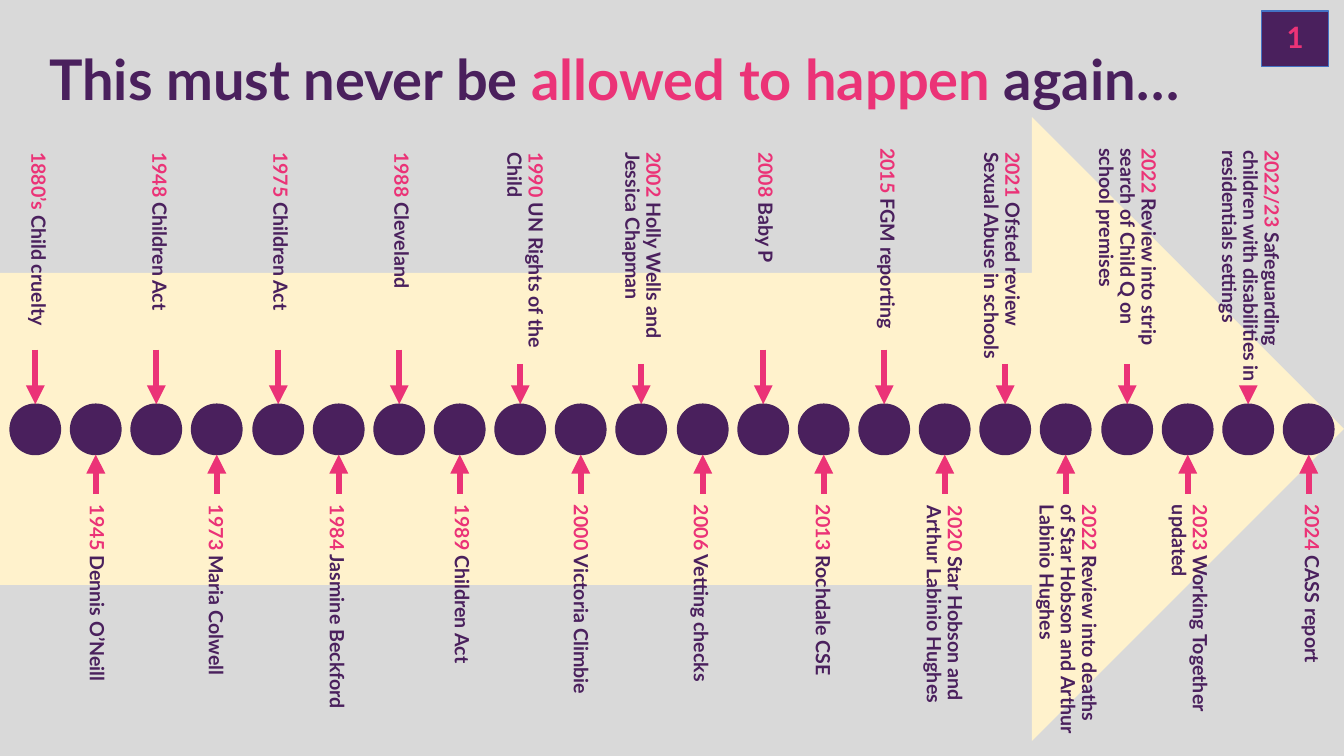
from lxml import etree
from pptx import Presentation
from pptx.dml.color import RGBColor
from pptx.enum import shapes, text
from pptx.oxml.ns import qn
from pptx.util import Emu, Pt

EMU_PER_PX = 9144
FONT = "Lato"
COLORS = {
    "background": "D9D9D9",
    "arrow": "FFF2CC",
    "purple": "4A205D",
    "outline": "48225C",
    "pink": "EB3377",
    "blue": "4472C4",
}
LEFT, RIGHT = text.MSO_ANCHOR.BOTTOM, text.MSO_ANCHOR.TOP
FIRST_CENTER, LAST_CENTER = 35, 1298
CIRCLE_TOP, CIRCLE_SIZE = 401, 50
LABEL_LENGTH = 253

EVENTS_ABOVE = [
    ("1880’s", "Child cruelty", 16, 140, 39, LEFT, 347),
    ("1948", "Children Act", 136, 140, 39, LEFT, 347),
    ("1975", "Children Act", 256, 140, 39, LEFT, 347),
    ("1988", "Cleveland", 376, 140, 50, LEFT, 347),
    ("1990", "UN Rights of the Child", 488, 140, 58, LEFT, 361),
    ("2002", "Holly Wells and Jessica Chapman", 605, 140, 63, LEFT, 361),
    ("2008", "Baby P", 737, 140, 39, LEFT, 347),
    ("2015", "FGM reporting", 858, 136, 39, LEFT, 347),
    ("2021", "Ofsted review Sexual Abuse in schools", 969, 140, 56, RIGHT, 361),
    ("2022", "Review into strip search of Child Q on school premises",
     1075, 136, 82, LEFT, 361),
    ("2022/23", "Safeguarding children with disabilities in residentials settings",
     1197, 138, 82, LEFT, 391),
]
EVENTS_BELOW = [
    ("1945", "Dennis O’Neill", 78, 490, 39, RIGHT, 490),
    ("1973", "Maria Colwell", 196, 490, 39, RIGHT, 490),
    ("1984", "Jasmine Beckford", 316, 490, 39, RIGHT, 490),
    ("1989", "Children Act", 440, 490, 39, RIGHT, 490),
    ("2000", "Victoria Climbie", 558, 490, 39, RIGHT, 490),
    ("2006", "Vetting checks", 677, 490, 39, RIGHT, 490),
    ("2013", "Rochdale CSE", 798, 490, 39, RIGHT, 490),
    ("2020", "Star Hobson and Arthur Labinio Hughes", 904, 491, 60, LEFT, 490),
    ("2022", "Review into deaths of Star Hobson and Arthur Labinio Hughes",
     1062, 490, 39, RIGHT, 490),
    ("2023", "Working Together updated", 1146, 490, 65, RIGHT, 490),
    ("2024", "CASS report", 1279, 490, 39, LEFT, 490),
]


def px(*lengths):
    return [Emu(length * EMU_PER_PX) for length in lengths]


def color(name):
    return RGBColor.from_string(COLORS[name])


def add_filled_shape(slide, kind, box, fill, line=None):
    shape = slide.shapes.add_shape(kind, *px(*box))
    shape.shadow.inherit = False
    shape.fill.solid()
    shape.fill.fore_color.rgb = color(fill)
    if line:
        shape.line.color.rgb = color(line)
        shape.line.width = Pt(1)
    else:
        shape.line.fill.background()
    return shape


def set_insets(frame, inset):
    inset_emu, = px(inset)
    frame.margin_left = frame.margin_right = inset_emu
    frame.margin_top = frame.margin_bottom = inset_emu


def write_runs(paragraph, size, runs):
    paragraph.font.name = FONT
    paragraph.font.size = Pt(size)
    paragraph.font.bold = True
    for words, color_name in runs:
        run = paragraph.add_run()
        run.text = words
        run.font.color.rgb = color(color_name)


def add_title(slide):
    frame = slide.shapes.add_textbox(*px(39, 39, 1245, 77)).text_frame
    frame.word_wrap = True
    write_runs(frame.paragraphs[0], 40, [
        ("This must never be ", "purple"),
        ("allowed to happen", "pink"),
        (" again…", "purple"),
    ])


def add_label(slide, year, words, left, top, width, anchor):
    frame = slide.shapes.add_textbox(*px(left, top, width, LABEL_LENGTH)).text_frame
    frame.word_wrap = True
    frame.vertical_anchor = anchor
    set_insets(frame, 11)
    frame._txBody.bodyPr.set("vert", "vert")
    paragraph = frame.paragraphs[0]
    paragraph.line_spacing = 0.9
    paragraph.space_after = Pt(5)
    write_runs(paragraph, 14, [(year, "pink"), (f" {words}", "purple")])


def add_pointer(slide, center, start, end):
    connector = slide.shapes.add_connector(
        shapes.MSO_CONNECTOR.STRAIGHT, *px(center, start, center, end))
    connector.line.color.rgb = color("pink")
    connector.line.width = Pt(4.5)
    etree.SubElement(connector.line._get_or_add_ln(), qn("a:tailEnd"), type="triangle")
    etree.SubElement(connector._element.spPr, qn("a:effectLst"))


def add_page_number(slide):
    shape = add_filled_shape(
        slide, shapes.MSO_SHAPE.RECTANGLE, (1251, 11, 67, 55), "purple", "blue")
    frame = shape.text_frame
    frame.vertical_anchor = text.MSO_ANCHOR.MIDDLE
    set_insets(frame, 19)
    paragraph = frame.paragraphs[0]
    paragraph.alignment = text.PP_ALIGN.CENTER
    paragraph.line_spacing = 0.9
    paragraph.space_after = Pt(7)
    write_runs(paragraph, 21, [("1", "pink")])


def add_timeline(slide):
    events = [event for pair in zip(EVENTS_ABOVE, EVENTS_BELOW) for event in pair]
    step = (LAST_CENTER - FIRST_CENTER) / (len(events) - 1)
    for index, (year, words, left, top, width, anchor, start) in enumerate(events):
        center = round(FIRST_CENTER + index * step)
        circle = (center - CIRCLE_SIZE // 2, CIRCLE_TOP, CIRCLE_SIZE, CIRCLE_SIZE)
        add_filled_shape(slide, shapes.MSO_SHAPE.OVAL, circle, "purple", "outline")
        add_label(slide, year, words, left, top, width, anchor)
        end = CIRCLE_TOP if start < CIRCLE_TOP else CIRCLE_TOP + CIRCLE_SIZE
        add_pointer(slide, center, start, end)


def main():
    presentation = Presentation()
    presentation.slide_width, presentation.slide_height = px(1333, 750)
    slide = presentation.slides.add_slide(presentation.slide_layouts[6])
    slide.background.fill.solid()
    slide.background.fill.fore_color.rgb = color("background")
    add_filled_shape(slide, shapes.MSO_SHAPE.RIGHT_ARROW, (0, 116, 1333, 619), "arrow")
    add_title(slide)
    add_timeline(slide)
    add_page_number(slide)
    presentation.save("out.pptx")


if __name__ == "__main__":
    main()
